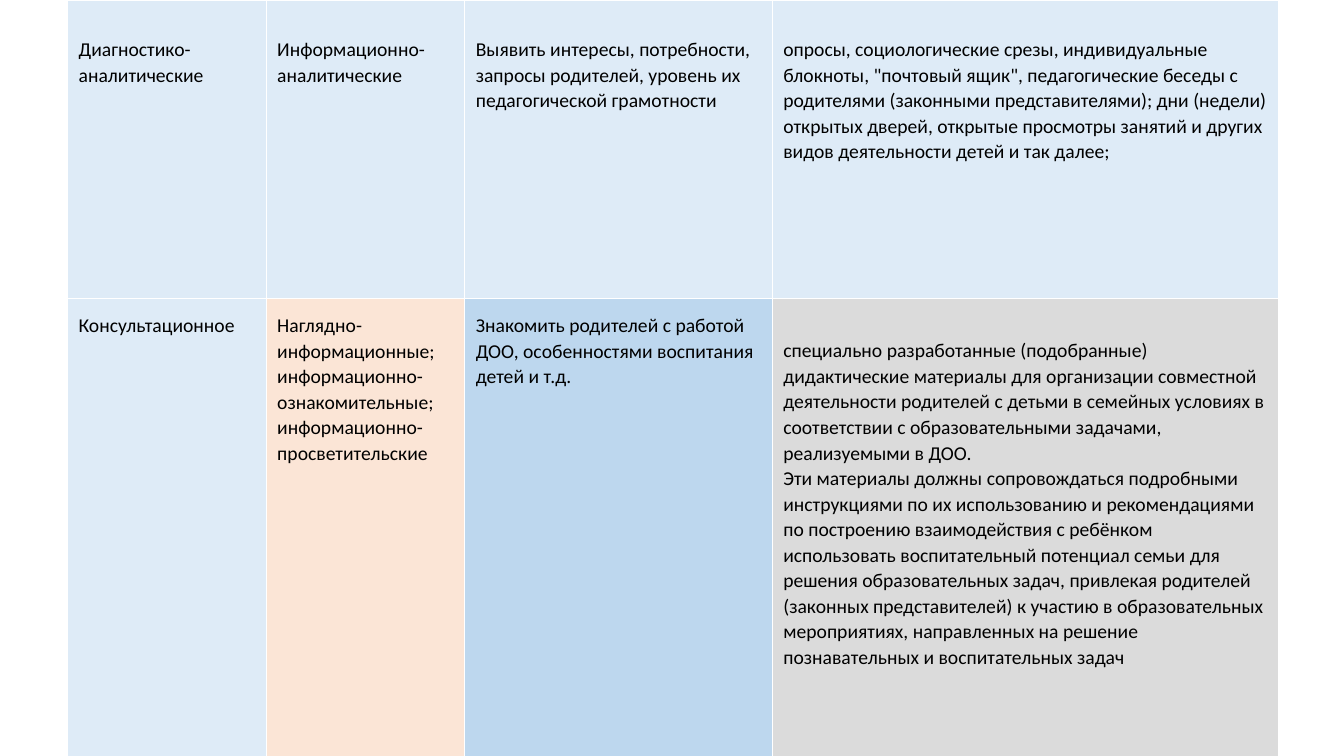
from lxml import etree
from pptx import Presentation
from pptx.dml.color import RGBColor
from pptx.enum import text
from pptx.oxml import ns
from pptx.util import Inches, Pt

COLORS = {
    "pale_blue": "DEEBF7",
    "blue": "BDD7EE",
    "peach": "FBE5D6",
    "gray": "DBDBDB",
    "text": "000000",
    "border": "FFFFFF",
}
COLUMN_WIDTHS = [1.97, 1.97, 3.05, 5.02]
ROW_HEIGHTS = [2.96, 6.04]

# Each cell: fill, top margin in inches, paragraphs
ROWS = [
    [
        ("pale_blue", 0.36, ["Диагностико-аналитические"]),
        ("pale_blue", 0.36, ["Информационно-аналитические"]),
        ("pale_blue", 0.36, ["Выявить интересы, потребности, запросы родителей, "
                             "уровень их педагогической грамотности"]),
        ("pale_blue", 0.36, [
            "опросы, социологические срезы, индивидуальные блокноты, "
            "\"почтовый ящик\", педагогические беседы с родителями (законными "
            "представителями); дни (недели) открытых дверей, открытые просмотры "
            "занятий и других видов деятельности детей и так далее;"]),
    ],
    [
        ("pale_blue", 0.14, ["Консультационное"]),
        ("peach", 0.14, ["Наглядно-информационные; информационно-ознакомительные; "
                         "информационно-просветительские"]),
        ("blue", 0.14, ["Знакомить родителей с работой ДОО, особенностями "
                        "воспитания детей и т.д."]),
        ("gray", 0.39, [
            "специально разработанные (подобранные) дидактические материалы для "
            "организации совместной деятельности родителей с детьми в семейных "
            "условиях в соответствии с образовательными задачами, реализуемыми в ДОО.",
            "Эти материалы должны сопровождаться подробными инструкциями по их "
            "использованию и рекомендациями по построению взаимодействия с ребёнком "
            "использовать воспитательный потенциал семьи для решения образовательных "
            "задач, привлекая родителей (законных представителей) к участию в "
            "образовательных мероприятиях, направленных на решение познавательных "
            "и воспитательных задач"]),
    ],
]


def set_borders(cell):
    properties = cell._tc.get_or_add_tcPr()
    for position, side in enumerate(("lnL", "lnR", "lnT", "lnB")):
        line = etree.Element(ns.qn(f"a:{side}"), w=str(Pt(1)))
        fill = etree.SubElement(line, ns.qn("a:solidFill"))
        etree.SubElement(fill, ns.qn("a:srgbClr"), val=COLORS["border"])
        properties.insert(position, line)


def fill_cell(cell, color, top, paragraphs):
    cell.fill.solid()
    cell.fill.fore_color.rgb = RGBColor.from_string(COLORS[color])
    cell.vertical_anchor = text.MSO_ANCHOR.TOP
    cell.margin_left = cell.margin_right = Inches(0.11)
    cell.margin_top, cell.margin_bottom = Inches(top), Inches(0.07)
    cell.text_frame.text = "\n".join(paragraphs)
    for paragraph in cell.text_frame.paragraphs:
        paragraph.line_spacing = 1.07
        for run in paragraph.runs:
            run.font.name = "Calibri"
            run.font.size = Pt(14)
            run.font.bold = False
            run.font.color.rgb = RGBColor.from_string(COLORS["text"])
    set_borders(cell)


def add_work_forms_table(slide, left, top, width, height):
    frame = slide.shapes.add_table(len(ROWS), len(COLUMN_WIDTHS), Inches(left),
                                   Inches(top), Inches(width), Inches(height))
    table = frame.table
    table.first_row = table.horz_banding = False
    for column, column_width in zip(table.columns, COLUMN_WIDTHS):
        column.width = Inches(column_width)
    for row, row_height, contents in zip(table.rows, ROW_HEIGHTS, ROWS):
        row.height = Inches(row_height)
        for cell, content in zip(row.cells, contents):
            fill_cell(cell, *content)


def main():
    presentation = Presentation()
    presentation.slide_width = Inches(13.33)
    presentation.slide_height = Inches(7.5)
    slide = presentation.slides.add_slide(presentation.slide_layouts[6])

    # Directions and forms of work with parents
    add_work_forms_table(slide, 0.67, 0, sum(COLUMN_WIDTHS), sum(ROW_HEIGHTS))
    presentation.save("out.pptx")


if __name__ == "__main__":
    main()
